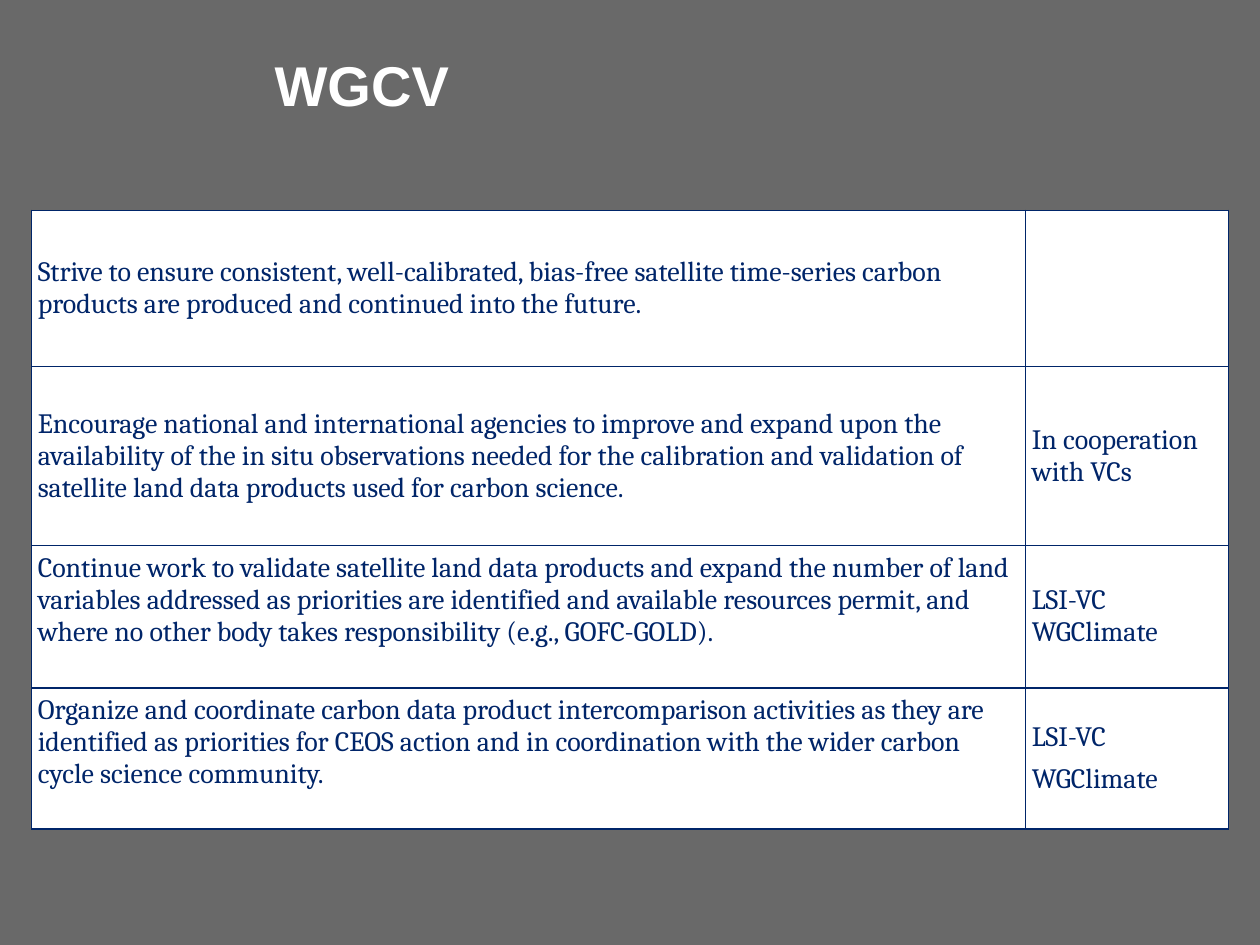
from dataclasses import dataclass

from lxml.etree import SubElement as Sub
from pptx import Presentation
from pptx.dml.color import RGBColor as RGB
from pptx.enum.text import MSO_ANCHOR as Anchor, PP_ALIGN as Align
from pptx.oxml.ns import qn
from pptx.util import Inches, Pt


@dataclass(frozen=True)
class Theme:
    back: str = "696969"
    ink: str = "002569"
    paper: str = "FFFFFF"
    head: str = "Arial"
    body: str = "Cambria"
    big: int = 32
    small: int = 16
    gap: int = 6
    line: int = 1
    inset: float = 0.05


class Deck:
    """Build styled elements on the current slide."""

    def __init__(self, theme):
        self.theme = theme
        self.prs = Presentation()
        self.prs.slide_width, self.prs.slide_height = Inches(10), Inches(7.5)
        self.slide = self.prs.slides.add_slide(self.prs.slide_layouts[5])
        fill = self.slide.background.fill
        fill.solid()
        fill.fore_color.rgb = RGB.from_string(theme.back)

    def run(self, para, text, size, face, color, bold=False):
        run = para.add_run()
        run.text = text
        font = run.font
        font.size, font.name, font.bold = Pt(size), face, bold
        font.color.rgb = RGB.from_string(color)

    def title(self, text, box):
        look = self.theme
        shape = self.slide.shapes.title
        shape.left, shape.top, shape.width, shape.height = map(Inches, box)
        frame = shape.text_frame
        frame.word_wrap = True
        frame.vertical_anchor = Anchor.TOP
        para = frame.paragraphs[0]
        para.alignment = Align.LEFT
        self.run(para, text, look.big, look.head, look.paper, True)

    def border(self, cell):
        props = cell._tc.get_or_add_tcPr()
        for spot, side in enumerate(("lnL", "lnR", "lnT", "lnB")):
            line = Sub(props, qn(f"a:{side}"), w=str(Pt(self.theme.line)))
            fill = Sub(line, qn("a:solidFill"))
            Sub(fill, qn("a:srgbClr"), val=self.theme.ink)
            props.insert(spot, line)

    def cell(self, cell, paras, anchor):
        look = self.theme
        cell.fill.solid()
        cell.fill.fore_color.rgb = RGB.from_string(look.paper)
        self.border(cell)
        cell.vertical_anchor = anchor
        pad = Inches(look.inset)
        cell.margin_left = cell.margin_right = pad
        cell.margin_top = cell.margin_bottom = pad
        frame = cell.text_frame
        for i, text in enumerate(paras):
            para = frame.add_paragraph() if i else frame.paragraphs[0]
            para.space_before = Pt(look.gap if i else 0)
            for j, part in enumerate(text.split("\n")):
                if j:
                    para.add_line_break()
                self.run(para, part, look.small, look.body, look.ink)

    def table(self, rows, left, top, wide, high):
        shape = self.slide.shapes.add_table(
            len(rows), len(wide), Inches(left), Inches(top),
            Inches(sum(wide)), Inches(sum(high)))
        grid = shape.table
        grid.first_row = grid.horz_banding = False
        for col, width in zip(grid.columns, wide):
            col.width = Inches(width)
        for i, (task, who, anchor) in enumerate(rows):
            grid.rows[i].height = Inches(high[i])
            self.cell(grid.cell(i, 0), [task], anchor)
            self.cell(grid.cell(i, 1), who, Anchor.MIDDLE)


TASKS = [
    ("Strive to ensure consistent, well-calibrated, bias-free satellite "
     "time-series carbon products are produced and continued into the future.",
     [], Anchor.MIDDLE),
    ("Encourage national and international agencies to improve and expand "
     "upon the availability of the in situ observations needed for the "
     "calibration and validation of satellite land data products used for "
     "carbon science.",
     ["In cooperation with VCs"], Anchor.MIDDLE),
    ("Continue work to validate satellite land data products and expand the "
     "number of land variables addressed as priorities are identified and "
     "available resources permit, and where no other body takes "
     "responsibility (e.g., GOFC-GOLD).",
     ["LSI-VC\nWGClimate"], Anchor.TOP),
    ("Organize and coordinate carbon data product intercomparison activities "
     "as they are identified as priorities for CEOS action and in "
     "coordination with the wider carbon cycle science community.",
     ["LSI-VC", "WGClimate"], Anchor.TOP),
]


def main():
    deck = Deck(Theme())
    deck.title("WGCV", (2.08, 0.35, 6.08, 1.15))
    deck.table(TASKS, 0.25, 1.67, (7.89, 1.61), (1.24, 1.42, 1.13, 1.12))
    deck.prs.save("out.pptx")


if __name__ == "__main__":
    main()
